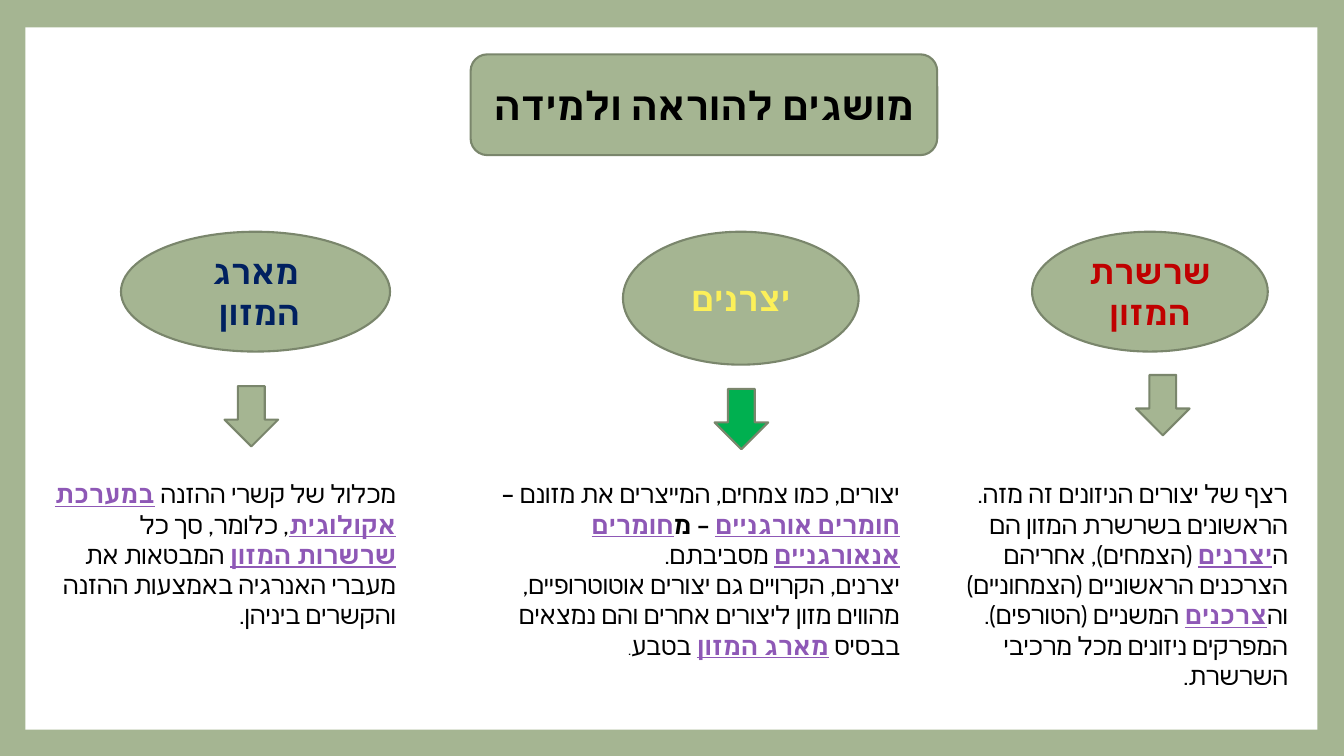
from dataclasses import dataclass

from lxml import etree
from pptx import Presentation
from pptx import util as u
from pptx.dml.color import RGBColor
from pptx.enum import shapes, text
from pptx.oxml import ns


@dataclass(frozen=True)
class Theme:
    sage: str = "A5B592"
    edge: str = "7A866C"
    white: str = "FFFFFF"
    black: str = "000000"
    purple: str = "8E58B6"
    red: str = "C00000"
    navy: str = "002060"
    yellow: str = "FCF059"
    green: str = "00B050"
    head: str = "Cabin"
    serif: str = "Times New Roman"
    sans: str = "Arial"
    title: float = 28
    topic: float = 24
    body: float = 18
    small: float = 11
    line: float = 1.5


T = Theme()


@dataclass(frozen=True)
class Box:
    left: float
    top: float
    width: float
    height: float

    def cm(self) -> list:
        return [u.Cm(n) for n in (self.left, self.top, self.width, self.height)]


@dataclass(frozen=True)
class Style:
    size: float
    font: str
    color: str = T.black
    bold: bool = False
    under: bool = False


@dataclass(frozen=True)
class Topic:
    name: str
    color: str
    oval: Box
    arrow: Box
    fill: str
    note: Box
    paras: list


# Run styles of the explanations
PLAIN = Style(T.body, T.serif)
MARK = Style(T.body, T.sans)
TERM = Style(T.body, T.serif, T.purple, True, True)
LINK = Style(T.body, T.sans, T.purple, True, True)
DASH = Style(T.body, T.sans, bold=True)
BOLD = Style(T.body, T.serif, bold=True)
DOT = Style(T.small, T.sans)

ROW, NOTE = 5.84, 11.94  # tops of the ovals and of the explanations
WIDE, TALL = 1.35, 1.52  # arrow size

TOPICS = [
    Topic("שרשרת המזון", T.red, Box(26.01, ROW, 5.94, 3.02),
          Box(28.63, 9.45, WIDE, TALL), T.sage, Box(23.62, NOTE, 9.09, 5.64), [
        [("רצף של יצורים הניזונים זה מזה", PLAIN), (". ", MARK)],
        [("הראשונים בשרשרת המזון הם ה", PLAIN), ("יצרנים", TERM),
         (" (", MARK),
         ("הצמחים), אחריהם הצרכנים הראשוניים (הצמחוניים) וה", PLAIN),
         ("צרכנים", TERM), (" ", MARK),
         ("המשניים (הטורפים). המפרקים ניזונים מכל מרכיבי השרשרת", PLAIN),
         (".", MARK)]]),
    Topic("יצרנים", T.yellow, Box(15.7, ROW, 5.94, 3.35),
          Box(18.01, 9.8, WIDE, TALL), T.green, Box(11.86, NOTE, 11.07, 4.88), [
        [("יצורים, כמו צמחים, המייצרים את מזונם", PLAIN), (" – ", MARK),
         ("חומרים אורגניים", LINK), (" – ", DASH), ("מ", BOLD),
         ("חומרים אנאורגניים", TERM), (" ", DASH), ("מסביבתם", PLAIN),
         (".", MARK)],
        [("יצרנים, הקרויים גם יצורים אוטוטרופיים, "
          "מהווים מזון ליצורים אחרים והם נמצאים בבסיס ", PLAIN),
         ("מארג המזון", TERM), (" ", MARK), ("בטבע", PLAIN), (".", DOT)]]),
    Topic("מארג המזון ", T.navy, Box(3.05, ROW, 6.78, 3.02),
          Box(5.66, 9.73, WIDE, TALL), T.sage, Box(1.09, NOTE, 9.14, 4.11), [
        [("מכלול של קשרי ההזנה ", PLAIN), ("במערכת אקולוגית", TERM),
         (", ", MARK), ("כלומר, סך כל ", PLAIN), ("שרשרות המזון", TERM),
         (" ", MARK),
         ("המבטאות את מעברי האנרגיה באמצעות ההזנה והקשרים ביניהן", PLAIN),
         (".", MARK)]]),
]


def rgb(code: str) -> RGBColor:
    return RGBColor.from_string(code)


def dress(run, style: Style) -> None:
    font = run.font
    font.size, font.name = u.Pt(style.size), style.font
    font.bold, font.underline = style.bold, style.under
    font.color.rgb = rgb(style.color)
    # Hebrew letters take the complex-script font
    etree.SubElement(font._element, ns.qn("a:cs")).set("typeface", T.head)


def align(para, side) -> None:
    para.alignment = side
    para._p.get_or_add_pPr().set("rtl", "1")


def draw(slide, kind, box: Box, fill: str, edge: bool = True):
    shape = slide.shapes.add_shape(kind, *box.cm())
    shape.shadow.inherit = False
    shape.fill.solid()
    shape.fill.fore_color.rgb = rgb(fill)
    if edge:
        shape.line.color.rgb = rgb(T.edge)
        shape.line.width = u.Pt(T.line)
    else:
        shape.line.fill.background()
    return shape


def label(shape, words: str, style: Style) -> None:
    frame = shape.text_frame
    frame.word_wrap = True
    frame.vertical_anchor = text.MSO_ANCHOR.MIDDLE
    frame.text = words
    para = frame.paragraphs[0]
    align(para, text.PP_ALIGN.CENTER)
    dress(para.runs[0], style)


def write(slide, box: Box, paras: list) -> None:
    frame = slide.shapes.add_textbox(*box.cm()).text_frame
    frame.word_wrap = True
    frame.auto_size = text.MSO_AUTO_SIZE.SHAPE_TO_FIT_TEXT
    for i, parts in enumerate(paras):
        para = frame.add_paragraph() if i else frame.paragraphs[0]
        align(para, text.PP_ALIGN.RIGHT)
        for words, style in parts:
            run = para.add_run()
            run.text = words
            dress(run, style)


def main() -> None:
    deck = Presentation()
    deck.slide_width, deck.slide_height = u.Cm(33.87), u.Cm(19.05)
    slide = deck.slides.add_slide(deck.slide_layouts[6])
    kinds = shapes.MSO_SHAPE

    # Green border around a white page
    slide.background.fill.solid()
    slide.background.fill.fore_color.rgb = rgb(T.sage)
    draw(slide, kinds.RECTANGLE, Box(0.64, 0.69, 32.56, 17.7), T.white, False)

    # Title
    title = draw(slide, kinds.ROUNDED_RECTANGLE,
                 Box(11.86, 1.37, 11.76, 2.54), T.sage)
    label(title, "מושגים להוראה ולמידה", Style(T.title, T.head, bold=True))

    # Topic columns
    for topic in TOPICS:
        oval = draw(slide, kinds.OVAL, topic.oval, T.sage)
        label(oval, topic.name, Style(T.topic, T.head, topic.color, True))
        draw(slide, kinds.DOWN_ARROW, topic.arrow, topic.fill)
        write(slide, topic.note, topic.paras)

    deck.save("out.pptx")


if __name__ == "__main__":
    main()
